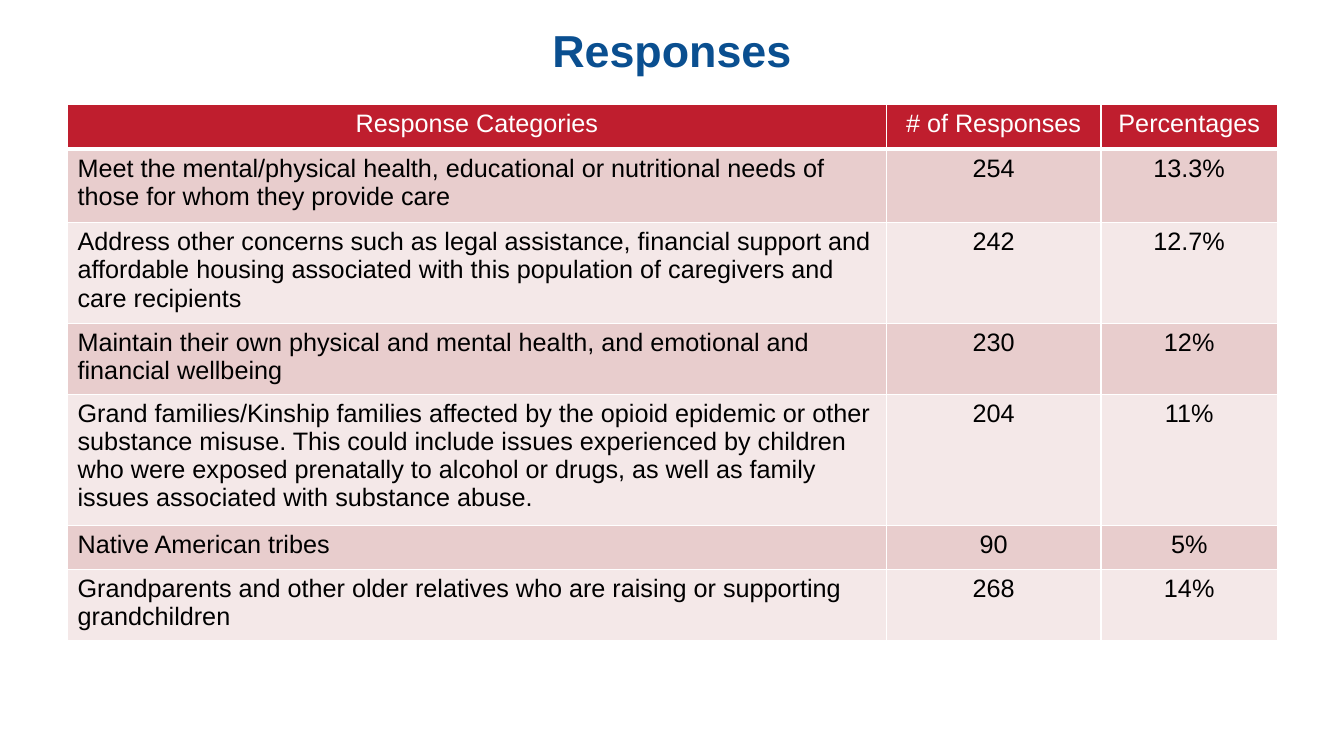
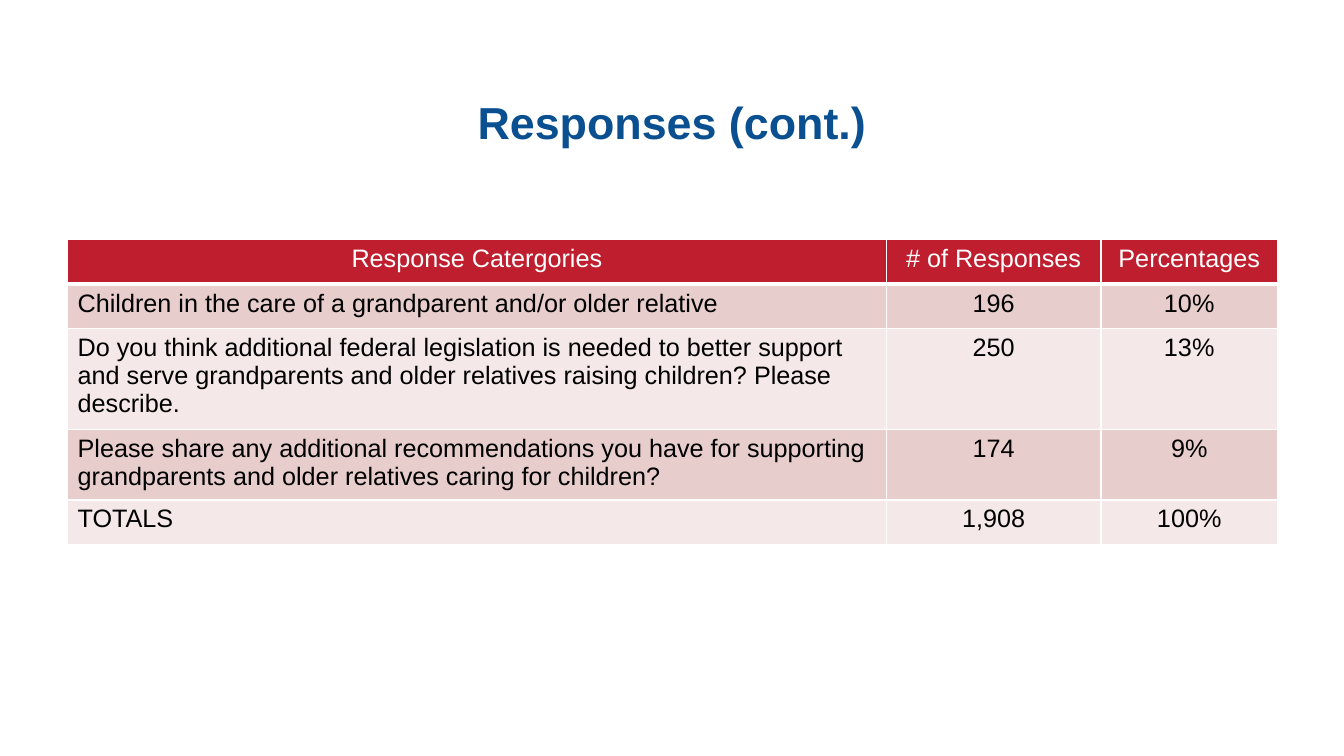
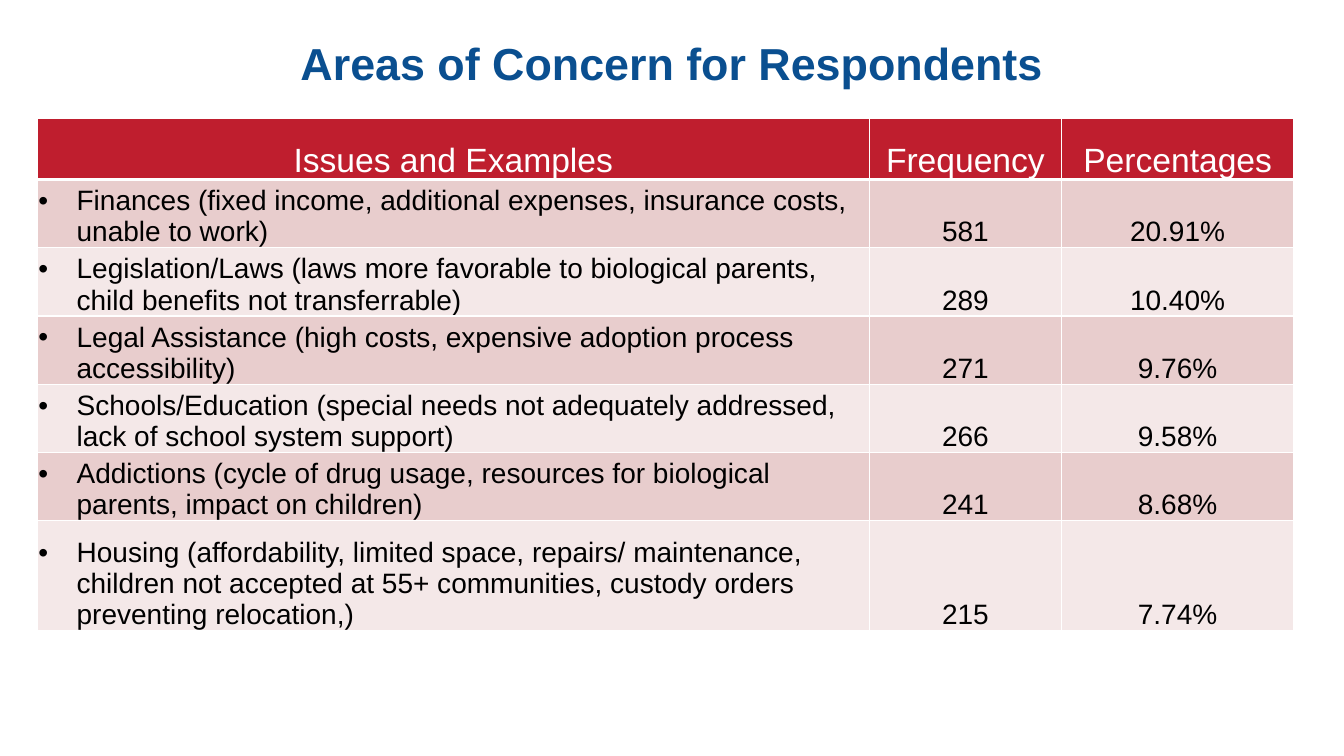
from dataclasses import dataclass

from lxml.etree import SubElement
from pptx import Presentation
from pptx.dml.color import RGBColor
from pptx.enum.text import MSO_ANCHOR as Anchor, PP_ALIGN as Align
from pptx.oxml.ns import qn
from pptx.slide import Slide
from pptx.table import _Cell as Cell
from pptx.text.text import TextFrame
from pptx.util import Inches, Pt

SLIDE_W, SLIDE_H = Inches(13.33), Inches(7.5)
FONT = "Arial"
WHITE = RGBColor(0xFF, 0xFF, 0xFF)
BLACK = RGBColor(0x00, 0x00, 0x00)
BLUE = RGBColor(0x0A, 0x4F, 0x90)
RED = RGBColor(0xBF, 0x1E, 0x2E)
BANDS = RGBColor(0xE8, 0xCD, 0xCD), RGBColor(0xF4, 0xE8, 0xE8)
TITLE_LEFT, TITLE_W, TITLE_H = SLIDE_W * 0.05, SLIDE_W * 0.9, SLIDE_H / 6
BULLET_INDENT = Inches(0.38)


@dataclass(frozen=True)
class TableStyle:
    left: float
    cols: tuple[float, ...]
    head_size: int
    body_size: int
    tight: bool = False
    bulleted: bool = False


@dataclass(frozen=True)
class Row:
    height: float
    cells: tuple[str, str, str]


@dataclass(frozen=True)
class TableSlide:
    title: str
    title_top: float
    table_top: float
    style: TableStyle
    rows: tuple[Row, ...]


RESPONSES = TableStyle(0.67, (8.12, 2.13, 1.75), 18, 18)
CONCERNS = TableStyle(0.37, (8.25, 1.91, 2.3), 24, 20, tight=True, bulleted=True)

SLIDES = (
    TableSlide("Responses", -0.13, 1.04, RESPONSES, (
        Row(0.44, ("Response Categories", "# of Responses", "Percentages")),
        Row(0.73, ("Meet the mental/physical health, educational or nutritional needs of "
                   "those for whom they provide care", "254", "13.3%")),
        Row(0.94, ("Address other concerns such as legal assistance, financial support and "
                   "affordable housing associated with this population of caregivers and "
                   "care recipients", "242", "12.7%")),
        Row(0.66, ("Maintain their own physical and mental health, and emotional and "
                   "financial wellbeing", "230", "12%")),
        Row(1.22, ("Grand families/Kinship families affected by the opioid epidemic or other "
                   "substance misuse. This could include issues experienced by children "
                   "who were exposed prenatally to alcohol or drugs, as well as family "
                   "issues associated with substance abuse.", "204", "11%")),
        Row(0.44, ("Native American tribes", "90", "5%")),
        Row(0.66, ("Grandparents and other older relatives who are raising or supporting "
                   "grandchildren", "268", "14%")),
    )),
    TableSlide("Responses (cont.)", 0.58, 2.38, RESPONSES, (
        Row(0.44, ("Response Catergories", "# of Responses", "Percentages")),
        Row(0.44, ("Children in the care of a grandparent and/or older relative",
                   "196", "10%")),
        Row(0.94, ("Do you think additional federal legislation is needed to better support "
                   "and serve grandparents and older relatives raising children? Please "
                   "describe.", "250", "13%")),
        Row(0.66, ("Please share any additional recommendations you have for supporting "
                   "grandparents and older relatives caring for children?", "174", "9%")),
        Row(0.44, ("TOTALS", "1,908", "100%")),
    )),
    TableSlide("Areas of Concern for Respondents", 0, 1.17, CONCERNS, (
        Row(0.61, ("Issues and Examples", "Frequency", "Percentages")),
        Row(0.63, ("Finances (fixed income, additional expenses, insurance costs, "
                   "unable to work)", "581", "20.91%")),
        Row(0.63, ("Legislation/Laws (laws more favorable to biological parents, "
                   "child benefits not transferrable)", "289", "10.40%")),
        Row(0.63, ("Legal Assistance (high costs, expensive adoption process "
                   "accessibility)", "271", "9.76%")),
        Row(0.63, ("Schools/Education (special needs not adequately addressed, "
                   "lack of school system support)", "266", "9.58%")),
        Row(0.63, ("Addictions (cycle of drug usage, resources for biological "
                   "parents, impact on children)", "241", "8.68%")),
        Row(1.09, ("Housing (affordability, limited space, repairs/ maintenance, "
                   "children not accepted at 55+ communities, custody orders "
                   "preventing relocation,)", "215", "7.74%")),
    )),
)


def write(tf: TextFrame, text: str, *, size: int, color: RGBColor,
          bold: bool = False, align: Align = Align.CENTER, bullet: bool = False) -> None:
    p = tf.paragraphs[0]
    p.alignment = align
    if bullet:
        p_pr = p._p.get_or_add_pPr()
        p_pr.set("marL", str(BULLET_INDENT))
        p_pr.set("indent", str(-BULLET_INDENT))
        SubElement(p_pr, qn("a:buFont"), typeface=FONT)
        SubElement(p_pr, qn("a:buChar"), char="•")
    r = p.add_run()
    r.text = text
    r.font.name, r.font.size, r.font.bold = FONT, Pt(size), bold
    r.font.color.rgb = color


def fill_cell(cell: Cell, color: RGBColor, bottom_pt: int) -> None:
    """Give the cell white borders and a solid fill; borders come first in the XML."""
    tc_pr = cell._tc.get_or_add_tcPr()
    for side, width in (("L", 1), ("R", 1), ("T", 1), ("B", bottom_pt)):
        ln = SubElement(tc_pr, qn(f"a:ln{side}"), w=str(Pt(width)))
        SubElement(SubElement(ln, qn("a:solidFill")), qn("a:srgbClr"), val=str(WHITE))
    cell.fill.solid()
    cell.fill.fore_color.rgb = color


def add_title(s: Slide, text: str, top: float) -> None:
    tf = s.shapes.add_textbox(int(TITLE_LEFT), Inches(top), int(TITLE_W), int(TITLE_H)).text_frame
    tf.word_wrap = True
    tf.vertical_anchor = Anchor.MIDDLE
    write(tf, text, size=32, color=BLUE, bold=True)


def add_data_table(s: Slide, rows: tuple[Row, ...], top: float, style: TableStyle) -> None:
    table = s.shapes.add_table(
        len(rows), len(style.cols), Inches(style.left), Inches(top),
        Inches(sum(style.cols)), Inches(sum(row.height for row in rows))).table
    for col, width in zip(table.columns, style.cols):
        col.width = Inches(width)
    for i, row in enumerate(rows):
        table.rows[i].height = Inches(row.height)
        head = i == 0
        for j, text in enumerate(row.cells):
            cell = table.cell(i, j)
            label = j == 0 and not head
            if style.tight:
                cell.vertical_anchor = Anchor.BOTTOM
                cell.margin_left = cell.margin_right = cell.margin_top = Inches(0.01)
                cell.margin_bottom = 0
            fill_cell(cell, RED if head else BANDS[(i - 1) % 2], 3 if head else 1)
            write(cell.text_frame, text,
                  size=style.head_size if head else style.body_size,
                  color=WHITE if head else BLACK,
                  align=Align.LEFT if label else Align.CENTER,
                  bullet=label and style.bulleted)


def main() -> None:
    prs = Presentation()
    prs.slide_width, prs.slide_height = SLIDE_W, SLIDE_H
    for content in SLIDES:
        s = prs.slides.add_slide(prs.slide_layouts[6])
        add_title(s, content.title, content.title_top)
        add_data_table(s, content.rows, content.table_top, content.style)
    prs.save("out.pptx")


if __name__ == "__main__":
    main()
